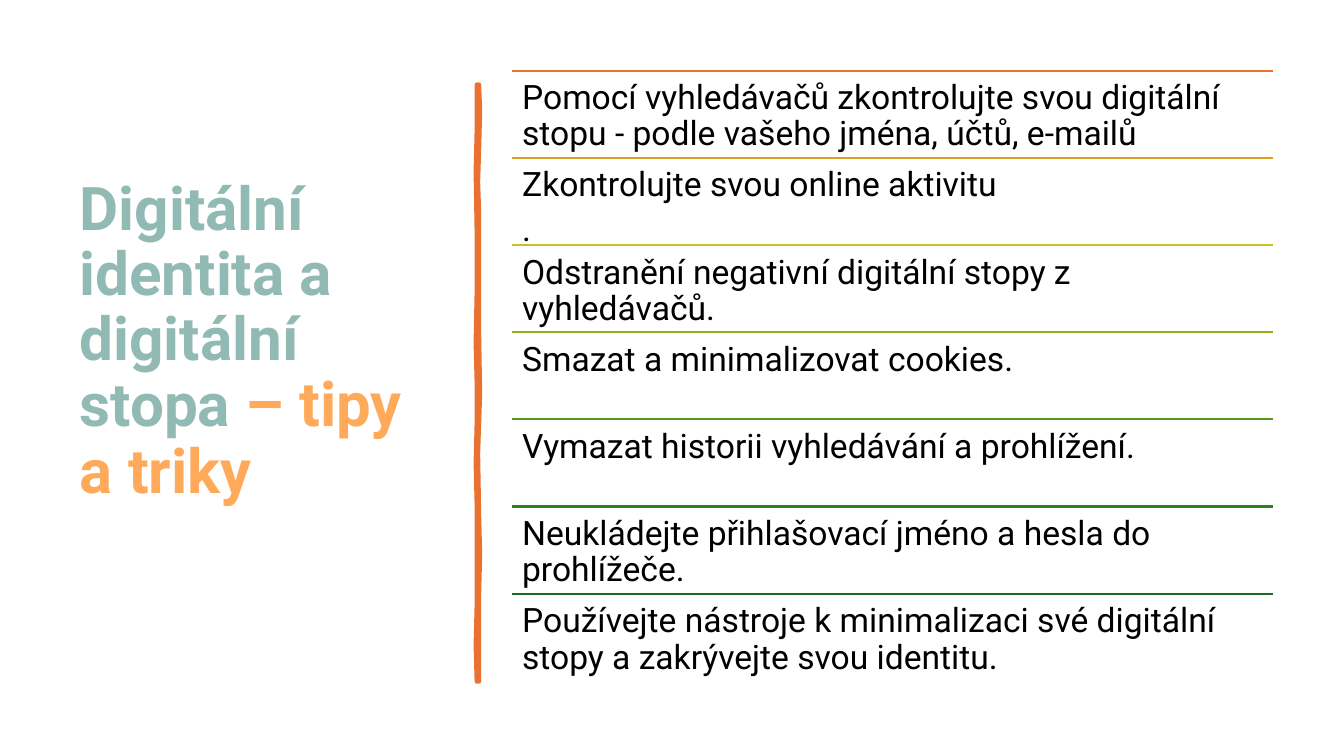
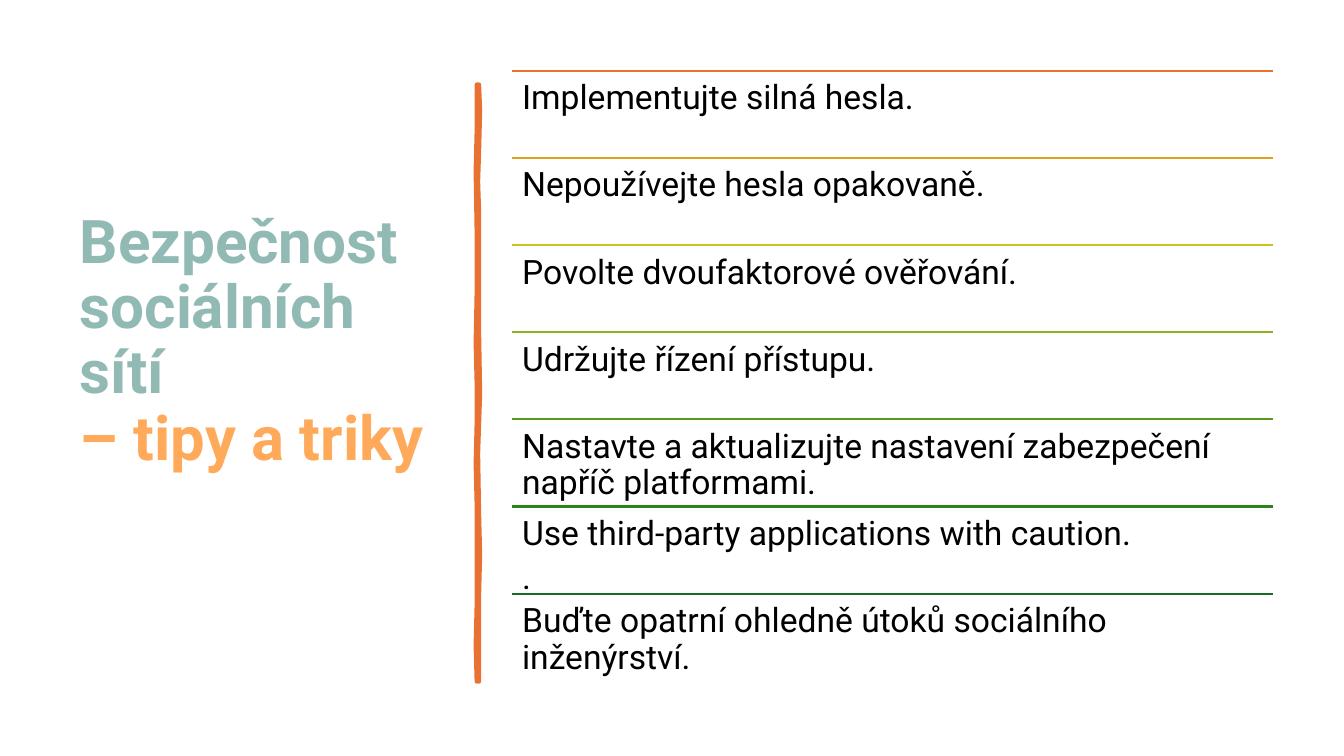
"""Build two slides of tips: a bold title, a hand-drawn bar and ruled rows."""
from lxml import etree
from pptx import Presentation, util as u
from pptx.dml import color
from pptx.enum import shapes, text
from pptx.oxml import ns

FONT = "Roboto"
TEAL, GOLD, RUST, INK = "92BAB5", "FFAA5A", "E97132", "000000"
RULES = [RUST, "E39D1F", "CBC11E", "8EB21E", "56991D", "2C821B", "196B24"]
LEFT, TOP, WIDE, STEP = 5.08, 0.7, 7.55, 0.865

BAR_RIGHT = [(4.75, 0.84), (4.76, 1.1), (4.75, 1.5), (4.74, 1.8), (4.75, 2.1),
             (4.75, 2.9), (4.75, 3.3), (4.76, 3.9), (4.74, 4.5), (4.75, 5.1),
             (4.76, 5.5), (4.75, 5.9), (4.75, 6.76)]
BAR_LEFT = [(4.73, 6.76), (4.72, 6.4), (4.73, 6.0), (4.73, 5.5), (4.73, 5.0),
            (4.72, 4.6), (4.73, 4.2), (4.73, 3.8), (4.72, 3.4), (4.73, 2.9),
            (4.73, 2.3), (4.72, 1.7), (4.73, 1.3), (4.73, 0.84)]

SLIDES = [
    {"title": [("Digitální identita a digitální stopa ", 43, TEAL),
               ("– tipy a triky", 44, GOLD)],
     "rows": [
         ["Pomocí vyhledávačů zkontrolujte svou digitální stopu - podle "
          "vašeho jména, účtů, e-mailů", "."],
         ["Zkontrolujte svou online aktivitu"],
         ["Odstranění negativní digitální stopy z vyhledávačů."],
         ["Smazat a minimalizovat cookies."],
         ["Vymazat historii vyhledávání a prohlížení."],
         ["Neukládejte přihlašovací jméno a hesla do prohlížeče."],
         ["Používejte nástroje k minimalizaci své digitální stopy a "
          "zakrývejte svou identitu."]]},
    {"title": [("Bezpečnost sociálních sítí\v", 43, TEAL),
               ("– tipy a triky", 44, GOLD)],
     "rows": [
         ["Implementujte silná hesla."],
         ["Nepoužívejte hesla opakovaně."],
         ["Povolte dvoufaktorové ověřování."],
         ["Udržujte řízení přístupu."],
         ["Nastavte a aktualizujte nastavení zabezpečení napříč "
          "platformami.", "."],
         ["Use third-party applications with caution."],
         ["Buďte opatrní ohledně útoků sociálního inženýrství."]]},
]


def rgb(code):
    """Turn a hex string into a colour."""
    return color.RGBColor.from_string(code)


def put(item, **vals):
    """Set each named attribute on an item."""
    for key, val in vals.items():
        setattr(item, key, val)


def add_run(para, words, size, code, bold=False):
    """Add a styled run, with a line break where the words end in one."""
    run = para.add_run()
    run.text = words.rstrip("\v")
    put(run.font, name=FONT, size=u.Pt(size), bold=bold)
    run.font.color.rgb = rgb(code)
    if words.endswith("\v"):
        para.add_line_break()


def add_title(slide, parts):
    """Place and fill the title."""
    title = slide.shapes.title
    put(title, left=u.Inches(0.69), top=u.Inches(TOP),
        width=u.Inches(3.74), height=u.Inches(5.4))
    frame = title.text_frame
    put(frame, word_wrap=True, auto_size=text.MSO_AUTO_SIZE.NONE,
        vertical_anchor=text.MSO_ANCHOR.MIDDLE)
    para = frame.paragraphs[0]
    put(para, alignment=text.PP_ALIGN.LEFT, line_spacing=0.9)
    for words, size, code in parts:
        add_run(para, words, size, code, True)


def add_bar(slide):
    """Draw the wavy upright bar."""
    first, *rest = [(u.Inches(x), u.Inches(y)) for x, y in BAR_RIGHT + BAR_LEFT]
    form = slide.shapes.build_freeform(*first)
    form.add_line_segments(rest, close=True)
    bar = form.convert_to_shape()
    bar.shadow.inherit = False
    bar.fill.solid()
    bar.fill.fore_color.rgb = bar.line.color.rgb = rgb(RUST)
    bar.line.width = u.Pt(3.25)
    etree.SubElement(bar.line._get_or_add_ln(), ns.qn("a:round"))


def add_row(slide, top, code, paras):
    """Draw one rule with its text below."""
    x, y, w = u.Inches(LEFT), u.Inches(top), u.Inches(WIDE)
    rule = slide.shapes.add_connector(shapes.MSO_CONNECTOR.STRAIGHT, x, y, x + w, y)
    rule.line.color.rgb = rgb(code)
    rule.line.width = u.Pt(1.5)
    etree.SubElement(rule._element.spPr, ns.qn("a:effectLst"))
    frame = slide.shapes.add_textbox(x, y, w, u.Inches(STEP)).text_frame
    edge = u.Inches(0.1)
    put(frame, word_wrap=True, margin_left=edge, margin_right=edge,
        margin_top=edge, margin_bottom=edge)
    for i, words in enumerate(paras):
        para = frame.add_paragraph() if i else frame.paragraphs[0]
        put(para, line_spacing=0.9, space_before=u.Pt(42 if i else 0))
        add_run(para, words, 24, INK)


def main():
    """Build and save the deck."""
    deck = Presentation()
    put(deck, slide_width=u.Inches(13.33), slide_height=u.Inches(7.5))
    for data in SLIDES:
        slide = deck.slides.add_slide(deck.slide_layouts[5])
        add_title(slide, data["title"])
        add_bar(slide)
        for i, (code, paras) in enumerate(zip(RULES, data["rows"])):
            add_row(slide, TOP + i * STEP, code, paras)
    deck.save("out.pptx")


if __name__ == "__main__":
    main()
